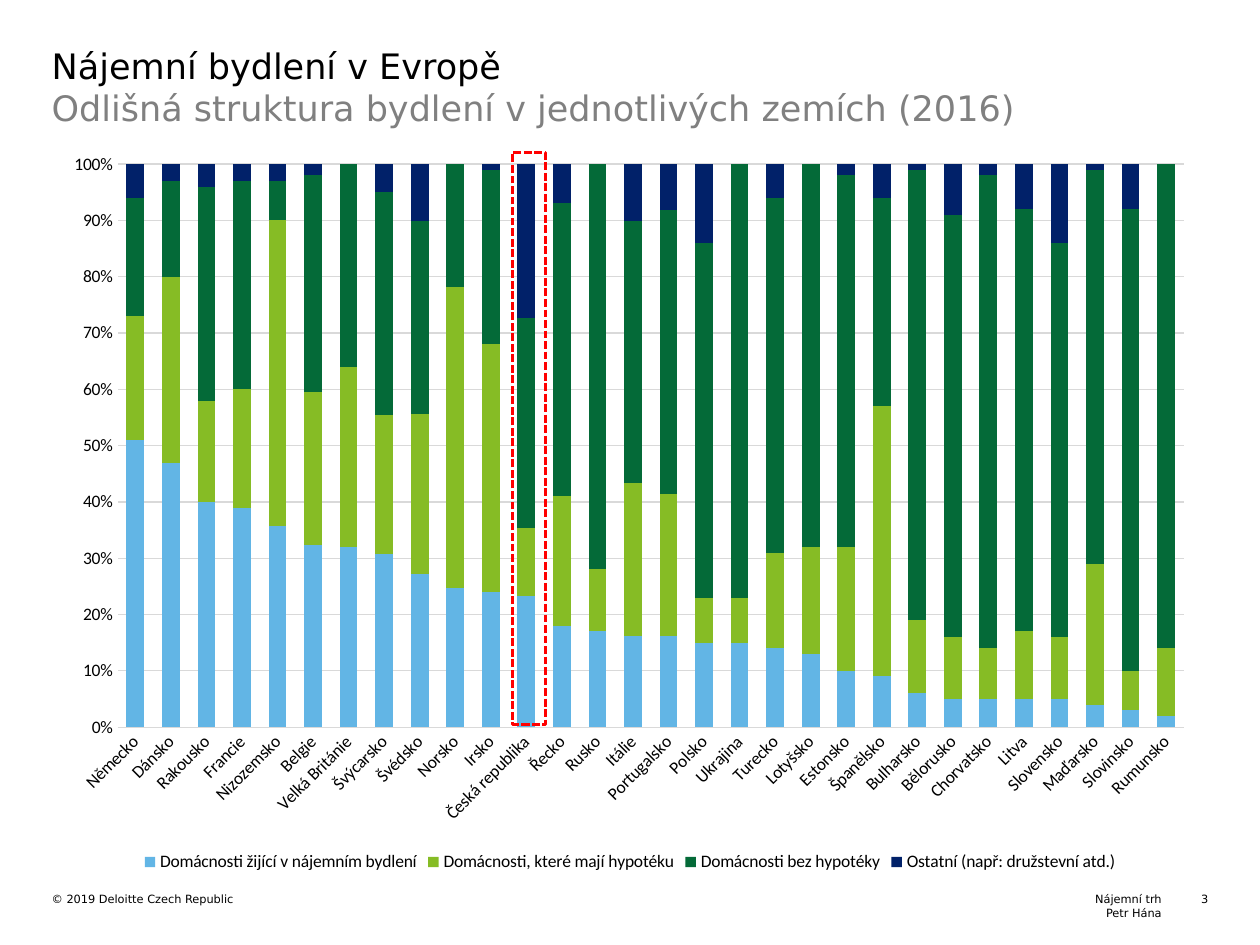
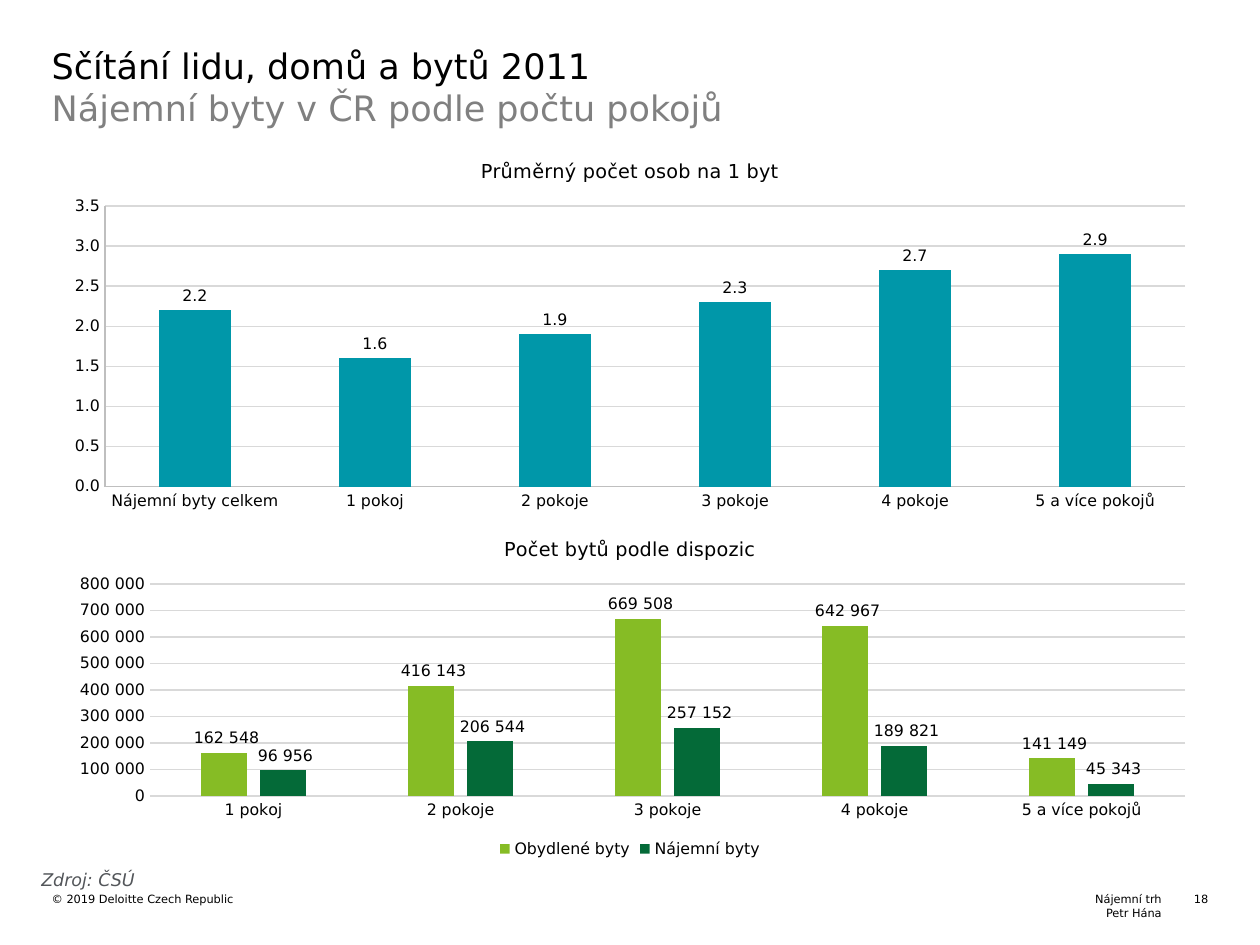
from lxml.etree import SubElement
from pptx import Presentation
from pptx.chart.data import CategoryChartData
from pptx.dml.color import RGBColor
from pptx.enum.chart import XL_CHART_TYPE, XL_LABEL_POSITION, XL_LEGEND_POSITION, XL_TICK_MARK
from pptx.enum.dml import MSO_LINE
from pptx.enum.shapes import MSO_SHAPE
from pptx.enum.text import PP_ALIGN
from pptx.oxml.ns import qn
from pptx.util import Inches, Pt

# Shared look
BLACK = RGBColor(0x00, 0x00, 0x00)
GREY = RGBColor(0x80, 0x80, 0x80)
SOURCE_GREY = RGBColor(0x53, 0x56, 0x5A)
GRID = RGBColor(0xD9, 0xD9, 0xD9)
AXIS = RGBColor(0xBF, 0xBF, 0xBF)
RED = RGBColor(0xFF, 0x00, 0x00)
SKY = RGBColor(0x62, 0xB5, 0xE5)
LIME = RGBColor(0x86, 0xBC, 0x25)
GREEN = RGBColor(0x04, 0x6A, 0x38)
NAVY = RGBColor(0x01, 0x21, 0x69)
TEAL = RGBColor(0x00, 0x97, 0xA9)
FONT = "DejaVu Sans"
MARGIN, CONTENT_WIDTH, CONTENT_TOP = 0.41, 9.18, 1.11
THOUSANDS = r"###\ ###\ ##0"

# Content
FOOTER_LEFT = ["© 2019 Deloitte Czech Republic"]
FOOTER_RIGHT = ["Nájemní trh", "Petr Hána"]
SOURCE = "Zdroj: ČSÚ"
ROOMS = ["1 pokoj", "2 pokoje", "3 pokoje", "4 pokoje", "5 a více pokojů"]

# Each chart: series are (name, colour, values); plot is the inner area
# as fractions of the chart (left, top, width, height)
TENURE = {
    "kind": XL_CHART_TYPE.COLUMN_STACKED_100,
    "top": CONTENT_TOP, "height": 5.85, "plot": (0.057, 0.033, 0.922, 0.764),
    "font": "Calibri", "size": 10, "format": "0%", "gap": 100, "overlap": 100,
    "legend": True, "rotation": -45, "category_line": GRID,
    "categories": [
        "Německo", "Dánsko", "Rakousko", "Francie", "Nizozemsko", "Belgie",
        "Velká Británie", "Švýcarsko", "Švédsko", "Norsko", "Irsko",
        "Česká republika", "Řecko", "Rusko", "Itálie", "Portugalsko", "Polsko",
        "Ukrajina", "Turecko", "Lotyšsko", "Estonsko", "Španělsko", "Bulharsko",
        "Bělorusko", "Chorvatsko", "Litva", "Slovensko", "Maďarsko",
        "Slovinsko", "Rumunsko"],
    "series": [
        ("Domácnosti žijící v nájemním bydlení", SKY,
         [51, 47, 40, 39, 36, 32, 32, 31, 27, 25, 24, 23, 18, 17, 16,
          16, 15, 15, 14, 13, 10, 9, 6, 5, 5, 5, 5, 4, 3, 2]),
        ("Domácnosti, které mají hypotéku", LIME,
         [22, 33, 18, 21, 55, 27, 32, 25, 28, 54, 44, 12, 23, 11, 27,
          25, 8, 8, 17, 19, 22, 48, 13, 11, 9, 12, 11, 25, 7, 12]),
        ("Domácnosti bez hypotéky", GREEN,
         [21, 17, 38, 37, 7, 38, 36, 40, 34, 22, 31, 37, 52, 72, 46,
          50, 63, 77, 63, 68, 66, 37, 80, 75, 84, 75, 70, 70, 82, 86]),
        ("Ostatní (např: družstevní atd.)", NAVY,
         [6, 3, 4, 3, 3, 2, 0, 5, 10, 0, 1, 27, 7, 0, 10,
          8, 14, 0, 6, 0, 2, 6, 1, 9, 2, 8, 14, 1, 8, 0]),
    ],
}
FLATS = {
    "kind": XL_CHART_TYPE.COLUMN_CLUSTERED, "title": "Počet bytů podle dispozic",
    "top": 4.12, "height": 2.73, "plot": (0.085, 0.189, 0.895, 0.616),
    "font": FONT, "size": 9, "format": THOUSANDS, "gap": 219, "overlap": -27,
    "legend": True, "labels": True, "scale": (800000, 100000),
    "category_line": GRID, "categories": ROOMS,
    "series": [
        ("Obydlené byty", LIME, [162548, 416143, 669508, 642967, 141149]),
        ("Nájemní byty", GREEN, [96956, 206544, 257152, 189821, 45343]),
    ],
}
PERSONS = {
    "kind": XL_CHART_TYPE.COLUMN_CLUSTERED, "title": "Průměrný počet osob na 1 byt",
    "top": CONTENT_TOP, "height": 3, "plot": (0.046, 0.175, 0.934, 0.743),
    "font": FONT, "size": 9, "format": "0.0", "gap": 150, "overlap": 0,
    "labels": True, "scale": (3.5, 0.5), "category_line": AXIS, "value_line": AXIS,
    "categories": ["Nájemní byty celkem"] + ROOMS,
    "series": [("Průměrný počet osob na 1 byt", TEAL, [2.2, 1.6, 1.9, 2.3, 2.7, 2.9])],
}


def set_font(font, size, color=BLACK, name=FONT):
    font.name, font.size, font.bold = name, Pt(size), False
    font.color.rgb = color


def add_box(page, left, top, width, height, inset=0):
    box = page.shapes.add_textbox(Inches(left), Inches(top), Inches(width), Inches(height))
    frame = box.text_frame
    frame.word_wrap = True
    frame.margin_left = frame.margin_right = Inches(inset)
    frame.margin_top = frame.margin_bottom = Inches(inset / 2)
    return frame


def add_span(para, text, size, color=BLACK):
    span = para.add_run()
    span.text = text
    set_font(span.font, size, color)
    return span


def add_footer(page, lines, left, width, height=0.22, align=PP_ALIGN.LEFT):
    frame = add_box(page, left, 7.08, width, height)
    for index, line in enumerate(lines):
        para = frame.add_paragraph() if index else frame.paragraphs[0]
        para.alignment = align
        add_span(para, line, 6.5)


def add_page(deck, number, title, subtitle):
    page = deck.slides.add_slide(deck.slide_layouts[6])
    add_footer(page, FOOTER_RIGHT, 5.2, 4.02, align=PP_ALIGN.RIGHT)
    add_footer(page, FOOTER_LEFT, MARGIN, 4.39)
    add_footer(page, [str(number)], 9.34, 0.25, 0.11, PP_ALIGN.RIGHT)
    para = add_box(page, MARGIN, 0.35, CONTENT_WIDTH, 0.76).paragraphs[0]
    add_span(para, title, 20)
    para.add_line_break()
    add_span(para, subtitle, 20, GREY)
    return page


def set_line(line, color):
    if color is None:
        line.fill.background()
    else:
        line.color.rgb = color
        line.width = Pt(0.75)


def place_plot(chart, fractions):
    area = chart._chartSpace.find(f"{qn('c:chart')}/{qn('c:plotArea')}")
    for old in area.findall(qn("c:layout")):
        area.remove(old)
    layout = SubElement(area, qn("c:layout"))
    area.insert(0, layout)
    manual = SubElement(layout, qn("c:manualLayout"))
    settings = [("layoutTarget", "inner"), ("xMode", "edge"), ("yMode", "edge")]
    settings += zip("xywh", fractions)
    for tag, value in settings:
        SubElement(manual, qn(f"c:{tag}")).set("val", str(value))


def add_column_chart(page, facts):
    data = CategoryChartData()
    data.categories = facts["categories"]
    for name, _, values in facts["series"]:
        data.add_series(name, values)
    chart = page.shapes.add_chart(
        facts["kind"], Inches(MARGIN), Inches(facts["top"]),
        Inches(CONTENT_WIDTH), Inches(facts["height"]), data).chart
    name, size = facts["font"], facts["size"]
    set_font(chart.font, 10, name=name)
    place_plot(chart, facts["plot"])

    # Title and legend
    chart.has_title = "title" in facts
    if chart.has_title:
        add_span(chart.chart_title.text_frame.paragraphs[0], facts["title"], 11)
        chart.chart_title.include_in_layout = False
    chart.has_legend = facts.get("legend", False)
    if chart.has_legend:
        chart.legend.position = XL_LEGEND_POSITION.BOTTOM
        chart.legend.include_in_layout = False
        set_font(chart.legend.font, size, name=name)

    # Axes
    category, value = chart.category_axis, chart.value_axis
    for axis, line in ((category, facts["category_line"]), (value, facts.get("value_line"))):
        axis.major_tick_mark = axis.minor_tick_mark = XL_TICK_MARK.NONE
        set_font(axis.tick_labels.font, size, name=name)
        set_line(axis.format.line, line)
    value.has_major_gridlines = True
    set_line(value.major_gridlines.format.line, GRID)
    value.tick_labels.number_format = facts["format"]
    value.tick_labels.number_format_is_linked = False
    if "scale" in facts:
        value.minimum_scale = 0
        value.maximum_scale, value.major_unit = facts["scale"]
    if "rotation" in facts:
        body = category._element.find(f"{qn('c:txPr')}/{qn('a:bodyPr')}")
        body.set("rot", str(facts["rotation"] * 60000))
        body.set("vert", "horz")

    # Columns
    plot = chart.plots[0]
    plot.gap_width, plot.overlap = facts["gap"], facts["overlap"]
    plot.vary_by_categories = False
    for series, (_, color, _) in zip(plot.series, facts["series"]):
        series.format.fill.solid()
        series.format.fill.fore_color.rgb = color
        if facts.get("labels"):
            labels = series.data_labels
            labels.show_value = True
            labels.position = XL_LABEL_POSITION.OUTSIDE_END
            labels.number_format = facts["format"]
            labels.number_format_is_linked = False
            set_font(labels.font, size, name=name)


def add_highlight(page):
    frame = page.shapes.add_shape(
        MSO_SHAPE.RECTANGLE, Inches(4.07), Inches(1.21), Inches(0.26), Inches(4.54))
    frame.shadow.inherit = False
    frame.fill.background()
    frame.line.color.rgb = RED
    frame.line.width = Pt(1.5)
    frame.line.dash_style = MSO_LINE.SQUARE_DOT


def main():
    deck = Presentation()
    deck.slide_width, deck.slide_height = Inches(10), Inches(7.5)

    # Housing structure by country
    page = add_page(deck, 3, "Nájemní bydlení v Evropě",
                    "Odlišná struktura bydlení v jednotlivých zemích (2016)")
    add_column_chart(page, TENURE)
    add_highlight(page)

    # Census: rental flats by rooms
    page = add_page(deck, 18, "Sčítání lidu, domů a bytů 2011",
                    "Nájemní byty v ČR podle počtu pokojů")
    source = add_box(page, 0.23, 6.85, 2.94, 0.27, inset=0.1).paragraphs[0]
    add_span(source, SOURCE, 10, SOURCE_GREY).font.italic = True
    add_column_chart(page, FLATS)
    add_column_chart(page, PERSONS)

    deck.save("out.pptx")


if __name__ == "__main__":
    main()
